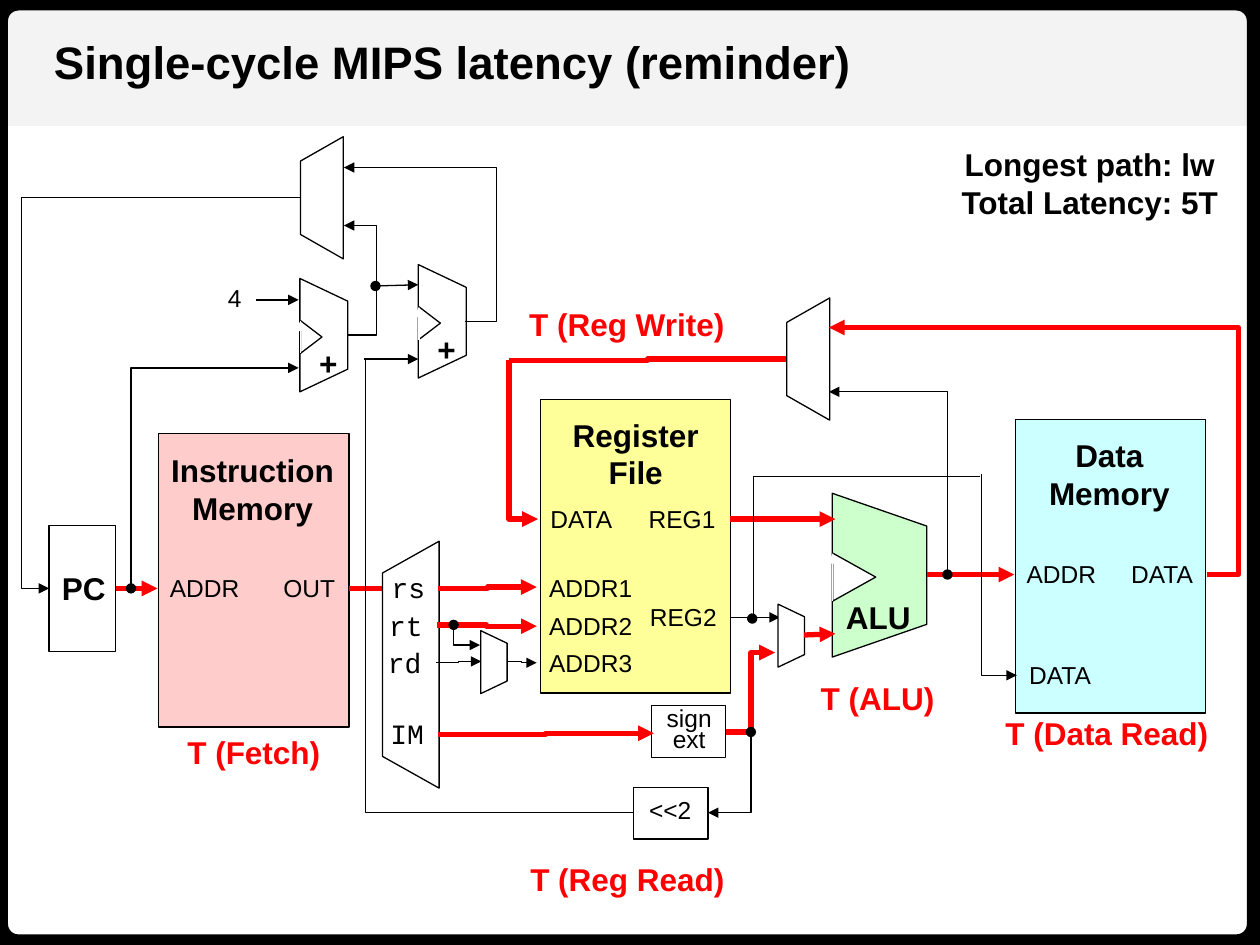
from pptx import Presentation
from pptx.dml.color import RGBColor
from pptx.enum.shapes import MSO_CONNECTOR as Link, MSO_SHAPE as Form
from pptx.enum.text import MSO_AUTO_SIZE as Fit, PP_ALIGN as Align
from pptx.oxml.ns import qn
from pptx.util import Inches, Pt
from lxml.etree import SubElement

BLACK = RGBColor(0, 0, 0)
WHITE = RGBColor(255, 255, 255)
RED = RGBColor(255, 0, 0)
GRAY = RGBColor(0xF3, 0xF3, 0xF3)
PINK = RGBColor(0xFF, 0xCC, 0xCC)
YELLOW = RGBColor(0xFF, 0xFF, 0x99)
CYAN = RGBColor(0xCC, 0xFF, 0xFF)
GREEN = RGBColor(0xCC, 0xFF, 0xCC)
THIN, THICK = 0.75, 3


class Canvas:
    """Draws the parts of a datapath diagram on one slide."""

    def __init__(self, slide):
        self.shapes = slide.shapes

    def shape(self, form, x, y, w, h, fill=None, line=BLACK, width=THIN, turn=0, adj=None):
        item = self.shapes.add_shape(form, Inches(x), Inches(y), Inches(w), Inches(h))
        item.shadow.inherit = False
        item.rotation = turn
        if adj is not None:
            item.adjustments[0] = adj
        if fill is None:
            item.fill.background()
        else:
            item.fill.solid()
            item.fill.fore_color.rgb = fill
        if line is None:
            item.line.fill.background()
        else:
            item.line.color.rgb = line
            item.line.width = Pt(width)
        return item

    def box(self, x, y, w, h, fill=None):
        return self.shape(Form.RECTANGLE, x, y, w, h, fill)

    def mux(self, x, y, w, h, turn, fill=None):
        return self.shape(Form.FLOWCHART_MANUAL_OPERATION, x, y, w, h, fill, turn=turn)

    def adder(self, x, y):
        self.mux(x, y, 0.9, 0.38, 270)
        self.notch(x + 0.22, y + 0.12, 0.26, 0.17)
        self.label("+", x + 0.31, y + 0.21, 0.35, 18, bold=True, align=Align.CENTER)

    def notch(self, x, y, w, h, fill=None):
        self.shape(Form.ISOSCELES_TRIANGLE, x, y, w, h, fill, turn=90)
        edge, mid = x + (w - h) / 2, y + h / 2
        self.wire(edge, mid + w / 2, edge, mid - w / 2, WHITE, tail="triangle")

    def label(self, text, x, y, w, size=14, color=BLACK, bold=False,
              align=Align.LEFT, font="Arial", gap=None):
        lines = text.split("\n")
        high = len(lines) * size / 60 + 0.1
        area = self.shapes.add_textbox(Inches(x), Inches(y), Inches(w), Inches(high))
        frame = area.text_frame
        frame.word_wrap = False
        frame.auto_size = Fit.SHAPE_TO_FIT_TEXT
        frame.text = text
        for para in frame.paragraphs:
            para.alignment = align
            para.font.size = Pt(size)
            para.font.name = font
            para.font.bold = bold
            para.font.color.rgb = color
            if gap:
                para.line_spacing = Pt(gap)

    def head(self, text, x, y, w, color=BLACK):
        self.label(text, x, y, w, 18, color, True, Align.CENTER)

    def wire(self, x1, y1, x2, y2, color=BLACK, width=THIN, tail=None, dot=None, bend=None):
        kind = Link.STRAIGHT if bend is None else Link.ELBOW
        item = self.shapes.add_connector(kind, Inches(x1), Inches(y1), Inches(x2), Inches(y2))
        item.line.color.rgb = color
        item.line.width = Pt(width)
        props = item._element.spPr
        for tag, end in (("a:headEnd", dot), ("a:tailEnd", tail)):
            if end:
                SubElement(props.find(qn("a:ln")), qn(tag), type=end)
        SubElement(props, qn("a:effectLst"))
        if bend is not None:
            share = round((bend - x1) / (x2 - x1) * 100000)
            guides = props.find(qn("a:prstGeom")).get_or_add_avLst()
            SubElement(guides, qn("a:gd"), name="adj1", fmla=f"val {share}")
        return item

    def arrow(self, *ends, dot=None, bend=None):
        return self.wire(*ends, tail="triangle", dot=dot, bend=bend)

    def hot(self, *ends, tail="triangle", bend=None):
        return self.wire(*ends, RED, THICK, tail, bend=bend)


def main():
    deck = Presentation()
    deck.slide_width, deck.slide_height = Inches(10), Inches(7.5)
    art = Canvas(deck.slides.add_slide(deck.slide_layouts[6]))

    art.shape(Form.RECTANGLE, 0, 0, 10, 1, GRAY, None)
    art.shape(Form.ROUNDED_RECTANGLE, -0.02, 0, 10, 7.5, width=12, adj=0.022)
    art.label("Single-cycle MIPS latency (reminder)", 0.33, 0.22, 6.59, 26, bold=True)

    for x, y, fill in ((8.06, 3.33, CYAN), (4.29, 3.17, YELLOW), (1.26, 3.44, PINK)):
        art.box(x, y, 1.51, 2.33, fill)
    pc = art.box(0.39, 4.17, 0.53, 1)
    for x, y in ((5.17, 5.6), (5.03, 6.25)):
        art.box(x, y, 0.59, 0.41)

    art.hot(2.77, 4.67, 3.12, 4.67, tail=None)
    art.arrow(5.8, 4.9, 6.19, 4.9)
    art.shape(Form.TRAPEZOID, 2.28, 5.05, 1.96, 0.45, WHITE, turn=270, adj=0.561)
    art.mux(6.33, 4.19, 1.3, 0.75, 270, GREEN)
    art.notch(6.59, 4.41, 0.38, 0.34, WHITE)
    for x, y in ((2.12, 2.47), (3.06, 2.36)):
        art.adder(x, y)
    for x, y in ((5.93, 2.68), (2.07, 1.4)):
        art.mux(x, y, 0.97, 0.34, 90)
    for x, y, fill in ((3.67, 5.15, None), (6.03, 4.94, WHITE)):
        art.mux(x, y, 0.5, 0.21, 270, fill)

    art.hot(0.94, 4.67, 1.25, 4.67).begin_connect(pc, 3)
    for ends in ((5.79, 4.12, 6.63, 4.12), (7.36, 4.56, 8.05, 4.56), (6.38, 5.04, 6.63, 5.03)):
        art.hot(*ends)
    art.hot(6.24, 2.85, 4.04, 2.86, tail=None, bend=5.14)
    for *ends, bend in (
        (4.04, 2.86, 4.27, 4.12, 4.04),
        (3.48, 4.67, 4.26, 4.66, 3.87),
        (3.47, 4.96, 4.26, 4.97, 3.86),
        (3.48, 5.83, 5.19, 5.82, 4.33),
        (5.76, 5.81, 6.15, 5.18, 5.96),
        (9.58, 4.56, 6.58, 2.6, 9.83),
    ):
        art.hot(*ends, bend=bend)

    art.wire(2.39, 1.57, 0.17, 2.03, bend=0.17)
    art.wire(5.03, 6.45, 2.9, 2.85, bend=2.9)
    art.wire(5.97, 4.91, 7.78, 3.78, dot="oval", bend=5.98)
    art.arrow(2.03, 2.38, 2.37, 2.38)
    art.arrow(2.98, 2.27, 3.32, 2.26, dot="oval")
    art.arrow(2.89, 2.85, 3.32, 2.85)
    for *ends, bend in (
        (0.17, 2.03, 0.39, 4.67, 0.17),
        (3.46, 5.26, 3.82, 5.25, 3.64),
        (4.03, 5.25, 4.26, 5.26, 4.14),
        (7.79, 3.76, 8.07, 5.36, 7.79),
        (2.76, 2.66, 2.73, 1.79, 2.99),
        (3.69, 2.55, 2.73, 1.33, 3.94),
    ):
        art.arrow(*ends, bend=bend)
    for ends in (
        (1.04, 4.67, 2.37, 2.92),
        (3.6, 4.96, 3.81, 5.12),
        (7.52, 4.56, 6.58, 3.11),
        (5.96, 5.81, 5.62, 6.45),
    ):
        art.arrow(*ends, dot="oval", bend=ends[0])

    for text, x, y, w in (
        ("Instruction\nMemory", 1.25, 3.53, 1.51),
        ("PC", 0.39, 4.47, 0.55),
        ("Register\nFile", 4.44, 3.25, 1.21),
        ("ALU", 6.61, 4.7, 0.72),
        ("Data\nMemory", 8.22, 3.41, 1.17),
        ("Longest path: lw\nTotal Latency: 5T", 7.52, 1.1, 2.26),
    ):
        art.head(text, x, y, w)
    for text, x, y, w in (
        ("T (Fetch)", 1.38, 5.77, 1.27),
        ("T (Reg Read)", 4.1, 6.78, 1.76),
        ("T (ALU)", 6.41, 5.34, 1.11),
        ("T (Data Read)", 7.87, 5.62, 1.83),
        ("T (Reg Write)", 4.09, 2.37, 1.77),
    ):
        art.head(text, x, y, w, RED)
    for text, x, y, w in (
        ("ADDR", 1.25, 4.5, 0.76), ("OUT", 2.15, 4.5, 0.62),
        ("DATA", 4.27, 3.95, 0.7), ("ADDR1", 4.26, 4.5, 0.87),
        ("ADDR2", 4.26, 4.8, 0.87), ("ADDR3", 4.26, 5.09, 0.87),
        ("REG1", 5.05, 3.95, 0.74), ("REG2", 5.06, 4.73, 0.74),
        ("ADDR", 8.05, 4.39, 0.76), ("DATA", 8.88, 4.39, 0.7),
        ("DATA", 8.07, 5.19, 0.7), ("4", 1.71, 2.2, 0.31),
    ):
        art.label(text, x, y, w)
    for text, x, y in (("rs", 3.01, 4.48), ("rt", 2.99, 4.78), ("rd", 2.98, 5.07), ("IM", 3, 5.64)):
        art.label(text, x, y, 0.47, 16, font="Courier New")
    for text, x, y, w in (("sign\next", 5.19, 5.6, 0.56), ("<<2", 5.05, 6.33, 0.54)):
        art.label(text, x, y, w, align=Align.CENTER, gap=12)

    deck.save("out.pptx")


if __name__ == "__main__":
    main()
